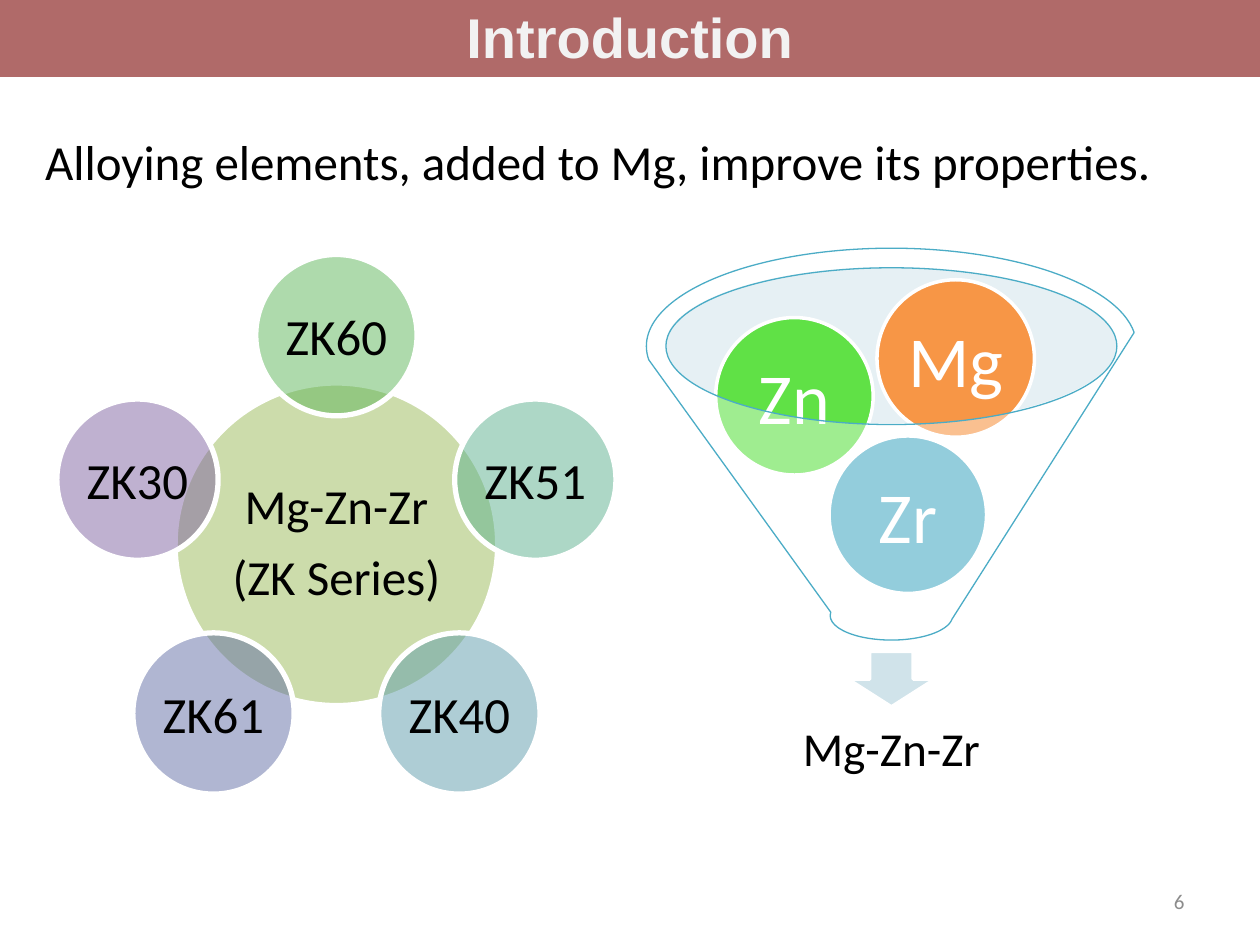
import math

from lxml import etree
from pptx import Presentation
from pptx.dml.color import RGBColor
from pptx.enum.shapes import MSO_SHAPE
from pptx.enum.text import MSO_ANCHOR, PP_ALIGN
from pptx.oxml.ns import qn
from pptx.util import Inches, Pt

RECT, OVAL = MSO_SHAPE.RECTANGLE, MSO_SHAPE.OVAL
ARROW, FUNNEL = MSO_SHAPE.DOWN_ARROW, MSO_SHAPE.FUNNEL
LEFT, CENTER, RIGHT = PP_ALIGN.LEFT, PP_ALIGN.CENTER, PP_ALIGN.RIGHT
MIDDLE = MSO_ANCHOR.MIDDLE

COLORS = {
    "banner": "953735", "title": "F2F2F2", "text": "000000", "number": "8C8C8C",
    "white": "FFFFFF", "mouth": "C1DBE5", "arrow": "D0E3EA", "outline": "4BACC6",
    "Zr": "4BACC6", "Zn": "60E146", "Mg": "F79646", "hub": "9BBB59",
    "ZK60": "5FB65B", "ZK51": "5DB18E", "ZK40": "5F9DAC",
    "ZK61": "626EA7", "ZK30": "8064A2",
}

prs = Presentation()
prs.slide_width, prs.slide_height = Inches(10), Inches(7.5)
s = prs.slides.add_slide(prs.slide_layouts[6])
COL, ROW = prs.slide_width / 100, prs.slide_height / 75


def add_shape(kind, x, y, w, h, fill, alpha=100, line=None, width=0):
    """Add a preset shape placed in grid columns and rows; alpha is a percentage."""
    sp = s.shapes.add_shape(kind, round(x * COL), round(y * ROW),
                            round(w * COL), round(h * ROW))
    sp.shadow.inherit = False
    sp.fill.solid()
    sp.fill.fore_color.rgb = RGBColor.from_string(COLORS[fill])
    if alpha < 100:
        color = sp.fill._xPr.find(qn("a:solidFill"))[0]
        etree.SubElement(color, qn("a:alpha"), val=str(alpha * 1000))
    if line:
        sp.line.color.rgb = RGBColor.from_string(COLORS[line])
        sp.line.width = Pt(width)
    else:
        sp.line.fill.background()
    return sp


def write(sp, lines, size, color="text", align=CENTER, font="Calibri", wrap=False):
    tf = sp.text_frame
    tf.text = "\n".join(lines)
    tf.word_wrap = wrap
    tf.vertical_anchor = MIDDLE
    for p in tf.paragraphs:
        p.alignment = align
        p.font.size, p.font.name = Pt(size), font
        p.font.color.rgb = RGBColor.from_string(COLORS[color])


# Title, statement and slide number
banner = add_shape(RECT, 0, -0.3, 100, 6.4, "banner", 74)
write(banner, ["Introduction"], 32, "title", font="Arial")
banner.text_frame.paragraphs[0].font.bold = True

statement = "Alloying elements, added to Mg, improve its properties."
for x, y, w, h, text, size, color, align in [
    (71.7, 69.5, 23.3, 4, "6", 12, "number", RIGHT),
    (2.6, 9.9, 90.7, 5.7, statement, 28, "text", LEFT),
    (54.1, 55.2, 33.3, 8.3, "Mg-Zn-Zr", 27, "text", CENTER),
]:
    tb = s.shapes.add_textbox(round(x * COL), round(y * ROW),
                              round(w * COL), round(h * ROW))
    write(tb, [text], size, color, align, wrap=True)

# Funnel with the three elements
add_shape(OVAL, 52.8, 21.2, 35.8, 12.4, "mouth", 40)
add_shape(ARROW, 67.3, 51.7, 6.9, 4.4, "arrow", line="white", width=2)
for element, x, y in [("Zr", 65.8, 34.6), ("Zn", 56.8, 25.2), ("Mg", 69.6, 22.2)]:
    ball = add_shape(OVAL, x, y, 12.5, 12.5, element, line="white", width=2)
    write(ball, [element], 41, "white")
add_shape(FUNNEL, 51.3, 19.7, 38.9, 31.1, "white", 40, "outline", 0.75)

# ZK series: a hub with alloys spaced evenly round it, clockwise from the top
HUB_X, HUB_Y, HUB_D = 26.7, 43.2, 25.6
ALLOY_D, ORBIT = HUB_D / 2, 16.6
hub = add_shape(OVAL, HUB_X - HUB_D / 2, HUB_Y - HUB_D / 2, HUB_D, HUB_D,
                "hub", 50, "white", 3)
write(hub, ["Mg-Zn-Zr", "(ZK Series)"], 28)
for p in hub.text_frame.paragraphs:
    p.line_spacing = 0.9
    p.space_after = Pt(10)

alloys = ["ZK60", "ZK51", "ZK40", "ZK61", "ZK30"]
for i, alloy in enumerate(alloys):
    angle = math.tau * i / len(alloys)
    x = HUB_X + ORBIT * math.sin(angle) - ALLOY_D / 2
    y = HUB_Y - ORBIT * math.cos(angle) - ALLOY_D / 2
    write(add_shape(OVAL, x, y, ALLOY_D, ALLOY_D, alloy, 50, "white", 3), [alloy], 29)

prs.save("out.pptx")
